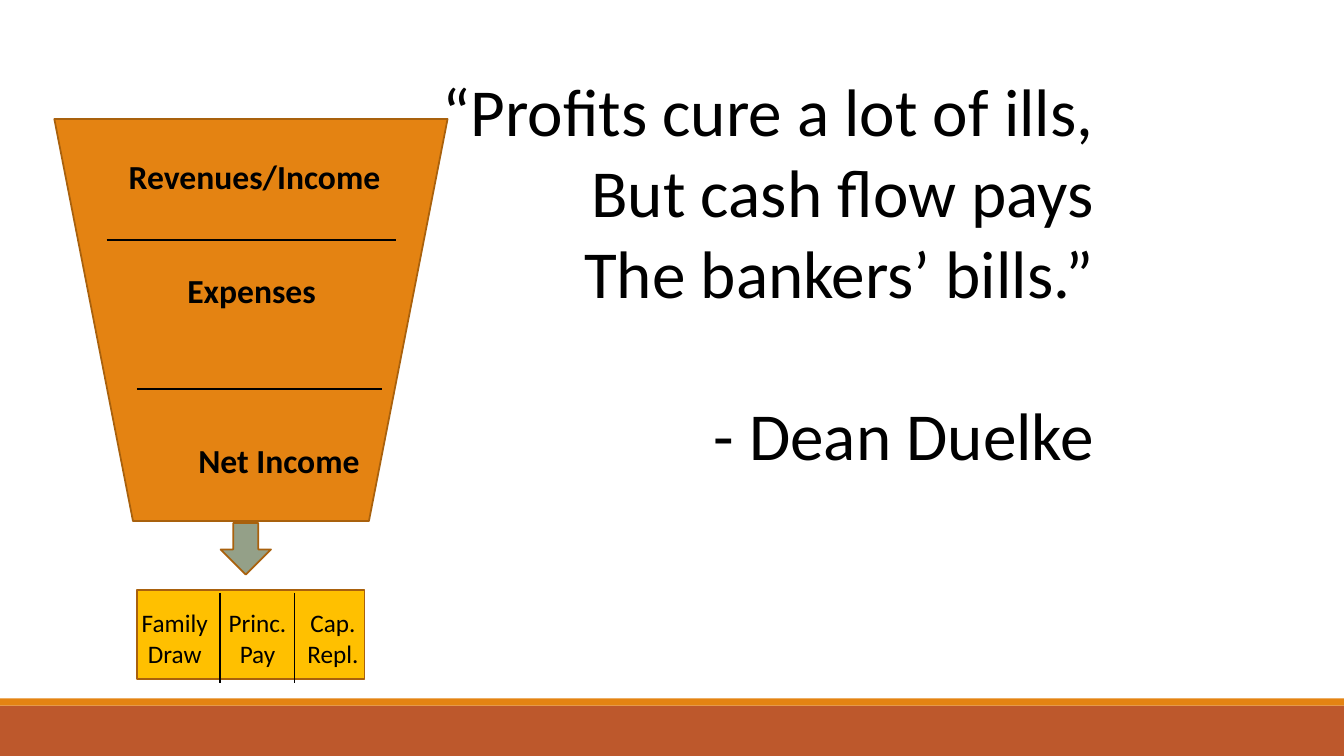
"""Build a slide with a cash-flow funnel beside a quotation."""
from dataclasses import dataclass

from lxml.etree import SubElement
from pptx import Presentation
from pptx.dml.color import RGBColor
from pptx.enum.shapes import MSO_CONNECTOR, MSO_SHAPE
from pptx.enum.text import MSO_AUTO_SIZE, PP_ALIGN
from pptx.oxml.ns import qn
from pptx.slide import Slide
from pptx.util import Cm, Pt

WIDTH, HEIGHT = 33.87, 19.05
COLORS = {
    "orange": "E48312",
    "rust": "BD582C",
    "gold": "FFC000",
    "sage": "94A088",
    "edge": "A9610D",
    "black": "000000",
}


@dataclass(frozen=True)
class Block:
    kind: MSO_SHAPE
    left: float
    top: float
    width: float
    height: float
    fill: str
    outlined: bool = True


@dataclass(frozen=True)
class Rule:
    x1: float
    y1: float
    x2: float
    y2: float


@dataclass(frozen=True)
class Label:
    lines: tuple[str, ...]
    left: float
    top: float
    width: float
    height: float
    size: int
    bold: bool = False
    align: PP_ALIGN = PP_ALIGN.CENTER
    last_gap: float = 0


BANDS = (
    Block(MSO_SHAPE.RECTANGLE, 0, 17.78, WIDTH, 1.27, "rust", False),
    Block(MSO_SHAPE.RECTANGLE, 0, 17.6, WIDTH, 0.18, "orange", False),
)
QUOTE = Label(
    ("“Profits cure a lot of ills,", "But cash flow pays", "The bankers’ bills.”", "- Dean Duelke"),
    4.17, 1.63, 23.65, 10.52, 48, align=PP_ALIGN.RIGHT, last_gap=58.5,
)
FLOW = (
    Block(MSO_SHAPE.FLOWCHART_MANUAL_OPERATION, 1.37, 3, 9.91, 10.13, "orange"),
    Block(MSO_SHAPE.RECTANGLE, 3.45, 14.86, 5.74, 2.26, "gold"),
    Block(MSO_SHAPE.DOWN_ARROW, 5.56, 13.18, 1.27, 1.3, "sage"),
)
RULES = (
    Rule(2.69, 6.05, 9.98, 6.05),
    Rule(3.45, 9.8, 9.63, 9.8),
    *(Rule(x, 14.94, x, 17.2) for x in (5.54, 7.42)),
)
STAGES = tuple(
    Label((text,), left, top, width, 1.27, 24, bold=True)
    for text, left, top, width in (
        ("Revenues/Income", 2.95, 3.81, 6.93),
        ("Expenses", 3.48, 6.68, 5.72),
        ("Net Income", 4.17, 10.95, 5.72),
    )
)
USES = tuple(
    Label(lines, left, 15.19, width, 1.8, 18)
    for lines, left, width in (
        (("Family", "Draw"), 3.3, 2.21),
        (("Princ.", "Pay"), 5.31, 2.36),
        (("Cap. Repl.",), 7.21, 2.36),
    )
)


def color(name: str) -> RGBColor:
    return RGBColor.from_string(COLORS[name])


def draw_block(s: Slide, block: Block) -> None:
    sp = s.shapes.add_shape(
        block.kind, Cm(block.left), Cm(block.top), Cm(block.width), Cm(block.height)
    )
    sp.shadow.inherit = False
    sp.fill.solid()
    sp.fill.fore_color.rgb = color(block.fill)
    if block.outlined:
        sp.line.color.rgb = color("edge")
        sp.line.width = Pt(1.25)
    else:
        sp.line.fill.background()


def draw_rule(s: Slide, rule: Rule) -> None:
    sp = s.shapes.add_connector(
        MSO_CONNECTOR.STRAIGHT, Cm(rule.x1), Cm(rule.y1), Cm(rule.x2), Cm(rule.y2)
    )
    sp.line.color.rgb = color("black")
    sp.line.width = Pt(1)
    SubElement(sp._element.spPr, qn("a:effectLst"))


def draw_label(s: Slide, label: Label) -> None:
    sp = s.shapes.add_textbox(
        Cm(label.left), Cm(label.top), Cm(label.width), Cm(label.height)
    )
    tf = sp.text_frame
    tf.word_wrap = True
    tf.auto_size = MSO_AUTO_SIZE.SHAPE_TO_FIT_TEXT
    formats = {"name": "Calibri", "size": Pt(label.size), "bold": label.bold}
    for i, text in enumerate(label.lines):
        p = tf.add_paragraph() if i else tf.paragraphs[0]
        p.alignment = label.align
        r = p.add_run()
        r.text = text
        for key, value in formats.items():
            setattr(r.font, key, value)
        r.font.color.rgb = color("black")
    if label.last_gap:
        p.space_before = Pt(label.last_gap)


def main() -> None:
    prs = Presentation()
    prs.slide_width, prs.slide_height = Cm(WIDTH), Cm(HEIGHT)
    s = prs.slides.add_slide(prs.slide_layouts[6])
    for band in BANDS:
        draw_block(s, band)
    draw_label(s, QUOTE)
    for block in FLOW:
        draw_block(s, block)
    for rule in RULES:
        draw_rule(s, rule)
    for label in STAGES + USES:
        draw_label(s, label)
    prs.save("out.pptx")


if __name__ == "__main__":
    main()
